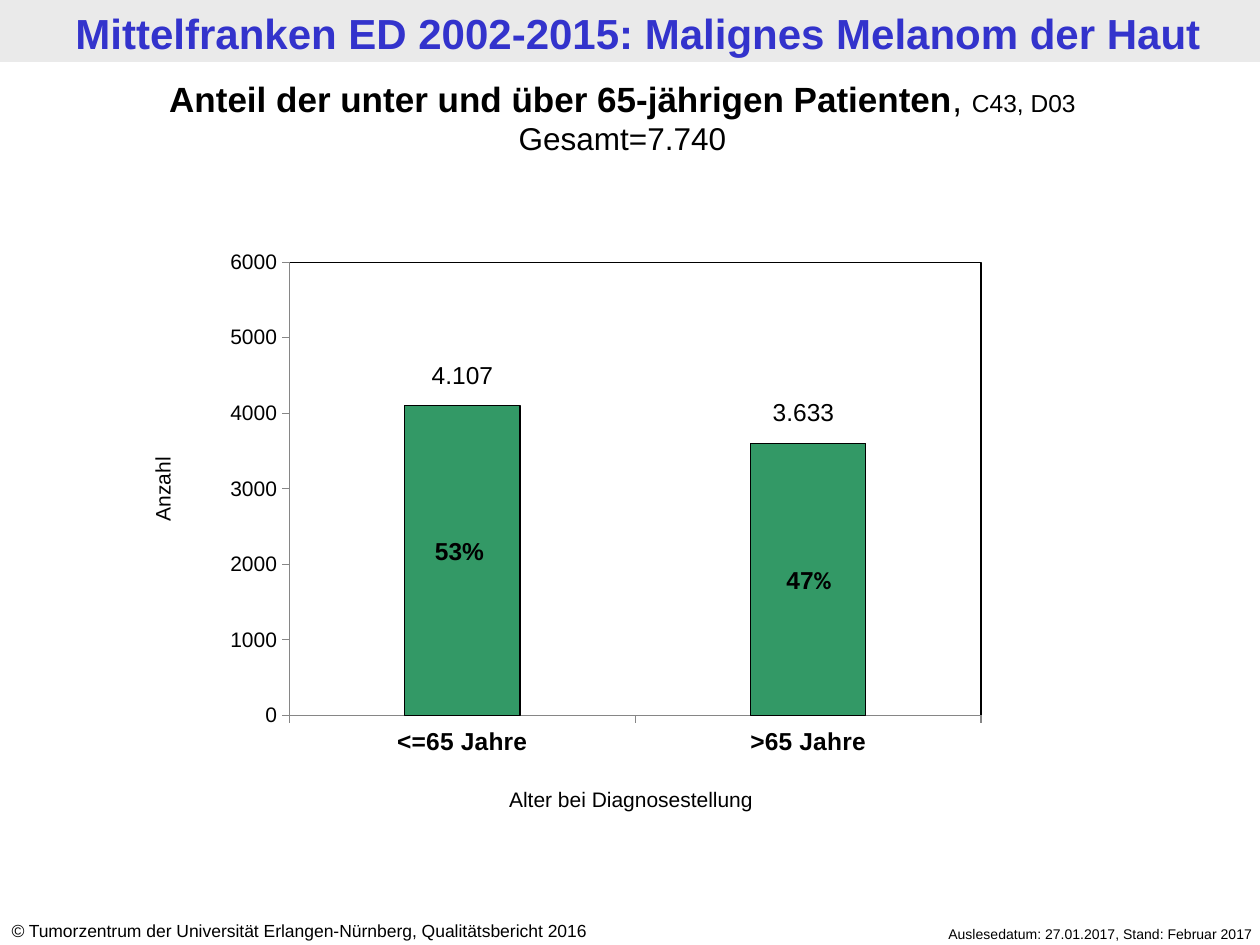
from lxml import etree
from pptx import Presentation
from pptx.chart.data import CategoryChartData
from pptx.dml.color import RGBColor
from pptx.enum.chart import XL_CHART_TYPE, XL_TICK_MARK
from pptx.enum.shapes import MSO_SHAPE
from pptx.enum.text import MSO_AUTO_SIZE, PP_ALIGN
from pptx.oxml import parse_xml
from pptx.oxml.ns import nsdecls, qn
from pptx.util import Pt

EMU_PER_PX = 914400 / 126
BLACK = RGBColor(0x00, 0x00, 0x00)
BLUE = RGBColor(0x33, 0x33, 0xCC)
GREEN = RGBColor(0x33, 0x99, 0x66)
GREY = RGBColor(0x86, 0x86, 0x86)
LIGHT_GREY = RGBColor(0xEA, 0xEA, 0xEA)


def px(length):
    return round(length * EMU_PER_PX)


def place(left, top, width, height):
    return px(left), px(top), px(width), px(height)


def style_font(font, size, bold=False, color=BLACK, name="Arial"):
    font.size = Pt(size)
    font.bold = bold
    font.name = name
    font.color.rgb = color


def add_band(page, position, color):
    band = page.shapes.add_shape(MSO_SHAPE.RECTANGLE, *place(*position))
    band.shadow.inherit = False
    band.fill.solid()
    band.fill.fore_color.rgb = color
    band.line.fill.background()


def add_text(page, position, lines, align=PP_ALIGN.CENTER, rotation=0):
    box = page.shapes.add_textbox(*place(*position))
    box.rotation = rotation
    frame = box.text_frame
    frame.word_wrap = True
    frame.auto_size = MSO_AUTO_SIZE.SHAPE_TO_FIT_TEXT
    for index, spans in enumerate(lines):
        para = frame.paragraphs[0] if index == 0 else frame.add_paragraph()
        para.alignment = align
        for text, *style in spans:
            span = para.add_run()
            span.text = text
            style_font(span.font, *style)
    return box


def style_axis(axis, size, bold=False):
    axis.has_major_gridlines = False
    axis.major_tick_mark = XL_TICK_MARK.OUTSIDE
    axis.minor_tick_mark = XL_TICK_MARK.NONE
    axis.format.line.color.rgb = GREY
    axis.format.line.width = Pt(0.75)
    style_font(axis.tick_labels.font, size, bold)


def frame_plot(chart, left, top, width, height):
    plot_area = chart.element.find(".//" + qn("c:plotArea"))
    for old_layout in plot_area.findall(qn("c:layout")):
        plot_area.remove(old_layout)
    layout = parse_xml(f"<c:layout {nsdecls('c')}><c:manualLayout/></c:layout>")
    settings = {"layoutTarget": "inner", "xMode": "edge", "yMode": "edge",
                "x": left, "y": top, "w": width, "h": height}
    for name, value in settings.items():
        etree.SubElement(layout[0], qn(f"c:{name}")).set("val", str(value))
    plot_area.insert(0, layout)
    plot_area.append(parse_xml(
        f'<c:spPr {nsdecls("c", "a")}><a:noFill/><a:ln w="9525"><a:solidFill>'
        f'<a:srgbClr val="{BLACK}"/></a:solidFill></a:ln></c:spPr>'))


def add_patient_chart(page):
    data = CategoryChartData()
    data.categories = ["<=65 Jahre", ">65 Jahre"]
    data.add_series("Series 1", [4100, 3600])
    chart = page.shapes.add_chart(
        XL_CHART_TYPE.COLUMN_STACKED, *place(190, 179, 880, 587), data).chart
    chart.has_legend = False
    chart.has_title = False
    style_font(chart.font, 18, name="Calibri")
    style_axis(chart.category_axis, 14, True)
    style_axis(chart.value_axis, 12)
    chart.value_axis.minimum_scale = 0
    chart.value_axis.maximum_scale = 6000
    chart.value_axis.major_unit = 1000
    plot = chart.plots[0]
    plot.vary_by_categories = False
    plot.gap_width = 200
    plot.overlap = 100
    columns = plot.series[0].format
    columns.fill.solid()
    columns.fill.fore_color.rgb = GREEN
    columns.line.color.rgb = BLACK
    columns.line.width = Pt(0.75)
    frame_plot(chart, 0.113, 0.142, 0.786, 0.772)


def main():
    deck = Presentation()
    deck.slide_width, deck.slide_height = px(1260), px(945)
    page = deck.slides.add_slide(deck.slide_layouts[6])

    add_band(page, (0, 0, 1260, 62), LIGHT_GREY)
    add_text(page, (8, 1, 1260, 62), [
        [("Mittelfranken ED 2002-2015: Malignes Melanom der Haut", 24, True, BLUE)]])
    copyright_box = add_text(page, (-1, 914, 660, 34), [
        [("©", 10),
         (" Tumorzentrum der Universität Erlangen-Nürnberg, Qualitätsbericht 2016", 10)],
    ], PP_ALIGN.LEFT)
    copyright_box.text_frame.paragraphs[0].runs[0].font.italic = True
    add_text(page, (838, 919, 427, 30), [
        [("Auslesedatum: 27.01.2017, Stand: Februar 2017", 8)]], PP_ALIGN.RIGHT)

    add_patient_chart(page)
    add_text(page, (0, 71, 1245, 93), [
        [("Anteil der unter und über 65-jährigen Patienten", 20, True),
         (", ", 20), ("C43, D03", 14)],
        [("Gesamt=7.740", 18)]])
    add_text(page, (398, 530, 123, 43), [[("53%", 14, True)]])
    add_text(page, (749, 559, 120, 43), [
        [("47", 14, True), ("%", 14, True, BLACK, "Calibri")]])
    add_text(page, (421, 780, 420, 38), [[("Alter bei Diagnosestellung", 12)]])
    add_text(page, (-2, 470, 329, 38), [[("Anzahl", 12)]], rotation=270)
    add_text(page, (398, 354, 129, 43), [[("4.107", 14)]])
    add_text(page, (739, 391, 129, 43), [[("3.633", 14)]])

    deck.save("out.pptx")


if __name__ == "__main__":
    main()
